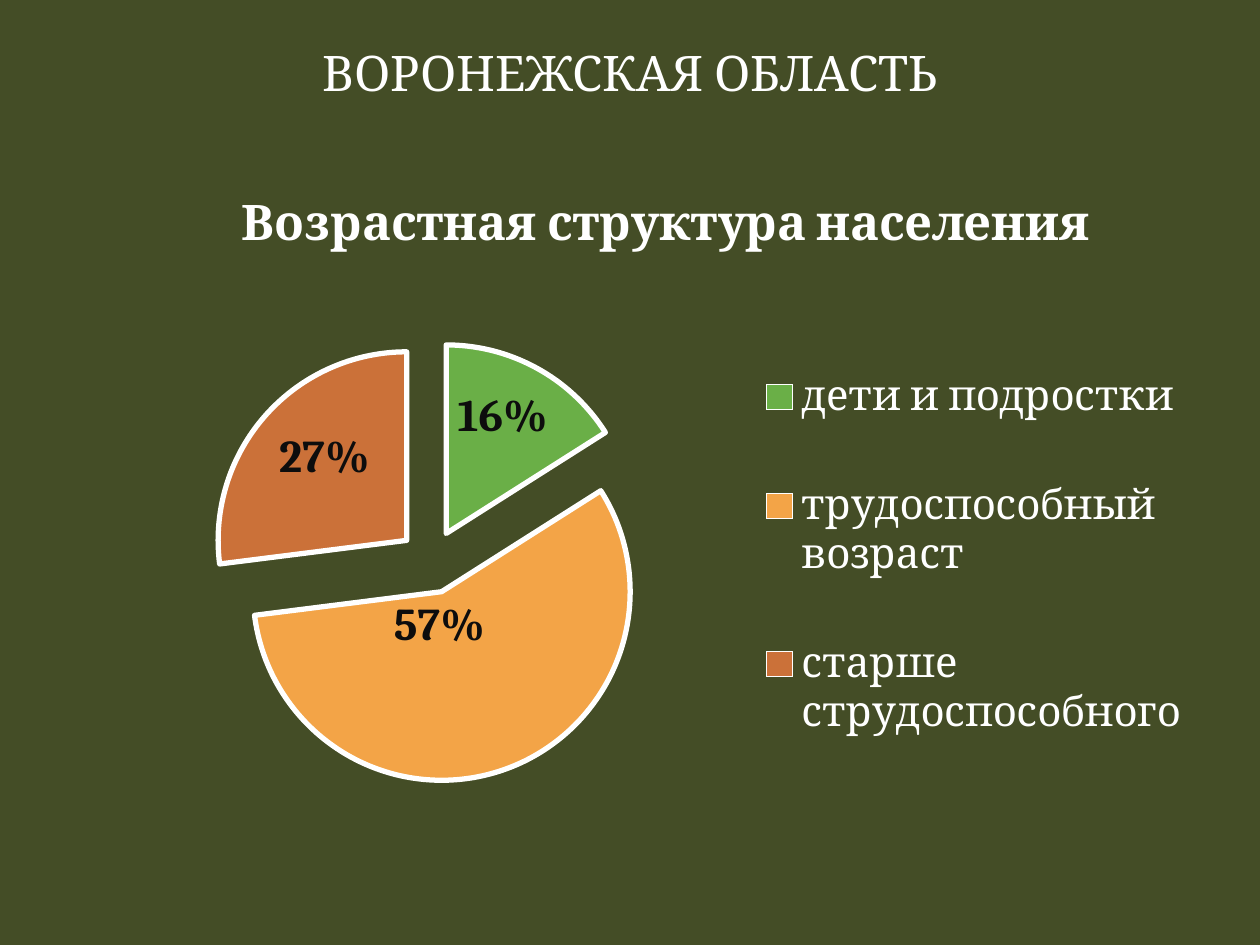
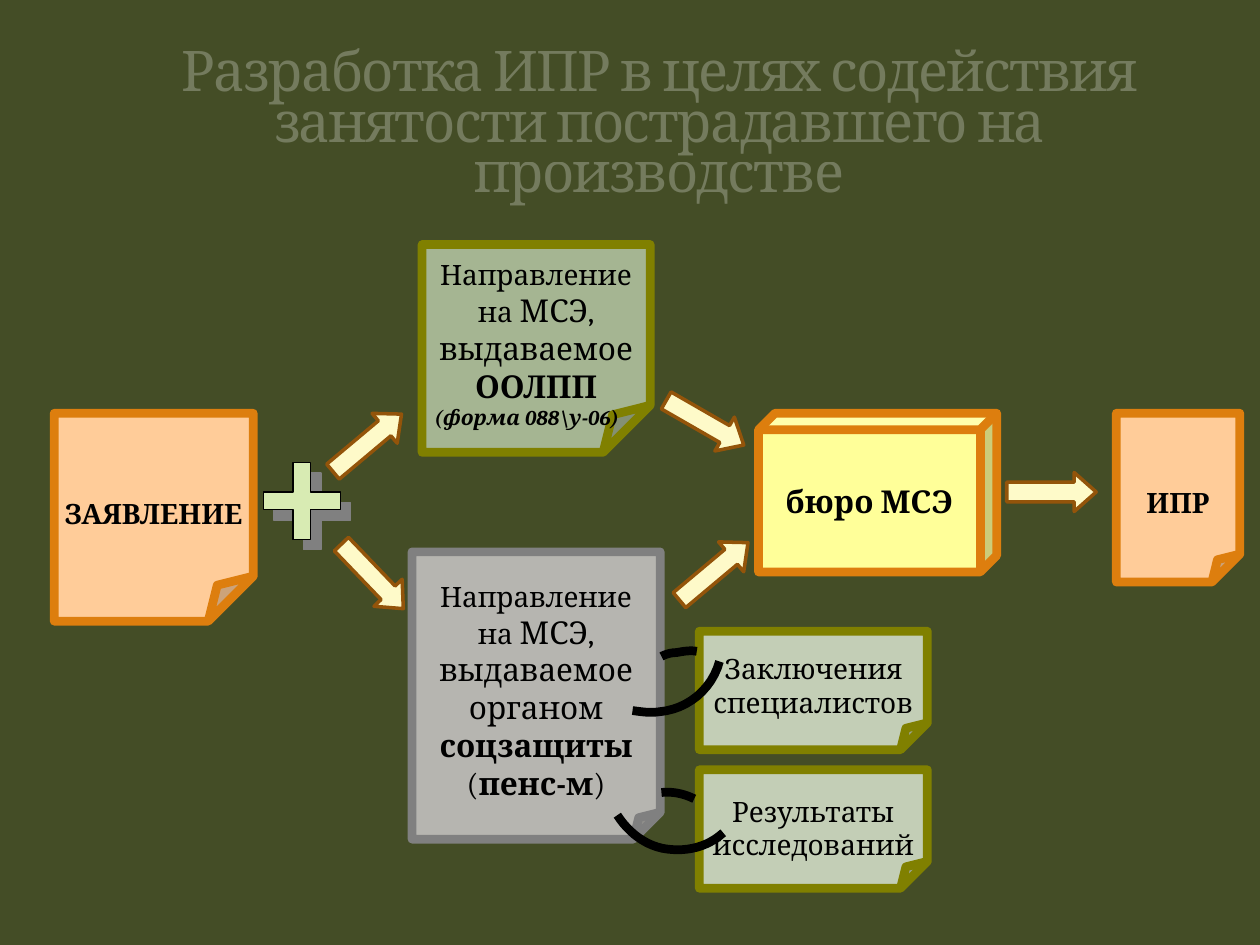
from pptx import Presentation
from pptx.chart.data import CategoryChartData
from pptx.dml.color import RGBColor
from pptx.enum.chart import XL_CHART_TYPE, XL_LABEL_POSITION, XL_LEGEND_POSITION
from pptx.enum.shapes import MSO_SHAPE
from pptx.enum.text import MSO_ANCHOR, MSO_AUTO_SIZE, PP_ALIGN
from pptx.oxml import parse_xml
from pptx.oxml.ns import nsdecls
from pptx.util import Inches, Pt

FONT = "Cambria"
BACKGROUND, WHITE, BLACK = "444D26", "FFFFFF", "000000"
ORANGE, PEACH, OLIVE, SAGE, GRAY = "DD7E0E", "FFCC99", "808000", "C3CEB6", "808080"
ARROW_FILL, ARROW_LINE = "FEFAC9", "93540A"


def rgb(value):
    return RGBColor.from_string(value)


def set_font(font, size, color, bold=False, italic=False):
    font.name, font.size, font.bold, font.italic = FONT, Pt(size), bold, italic
    font.color.rgb = rgb(color)


def run(text, size=18, color=BLACK, **style):
    return text, dict(size=size, color=color, **style)


def add_runs(p, runs, align=PP_ALIGN.CENTER):
    p.alignment = align
    for text, style in runs:
        r = p.add_run()
        r.text = text
        set_font(r.font, **style)


def manual_layout(x, y, w=None, h=None, inner=False, edge=True):
    target = '<c:layoutTarget val="inner"/>' if inner else ""
    modes = '<c:xMode val="edge"/><c:yMode val="edge"/>' if edge else ""
    sides = "".join(f'<c:{name} val="{value}"/>' for name, value in zip("xywh", (x, y, w, h))
                    if value is not None)
    return parse_xml(f'<c:layout {nsdecls("c")}><c:manualLayout>{target}{modes}{sides}'
                     '</c:manualLayout></c:layout>')


def place(element, layout, after=None):
    for old in element.findall(layout.tag):
        element.remove(old)
    if after is None:
        element.insert(0, layout)
    else:
        after.addnext(layout)


def bezier(start, *curves):
    points = [start]
    for a, b, end in curves:
        origin = points[-1]
        for i in range(1, 13):
            t = i / 12
            weights = ((1 - t) ** 3, 3 * t * (1 - t) ** 2, 3 * t * t * (1 - t), t ** 3)
            points.append(tuple(sum(w * q[k] for w, q in zip(weights, (origin, a, b, end)))
                                for k in (0, 1)))
    return points


class Deck:
    def __init__(self):
        self.prs = Presentation()
        self.prs.slide_width, self.prs.slide_height = Inches(10), Inches(7.5)

    def slide(self):
        self.s = self.prs.slides.add_slide(self.prs.slide_layouts[6])
        fill = self.s.background.fill
        fill.solid()
        fill.fore_color.rgb = rgb(BACKGROUND)

    def title(self, text, box, size, faded=False):
        tf = self.s.shapes.add_textbox(*map(Inches, box)).text_frame
        tf.word_wrap = True
        p = tf.paragraphs[0]
        add_runs(p, [run(text, size, WHITE)])
        if not faded:
            tf.auto_size = MSO_AUTO_SIZE.SHAPE_TO_FIT_TEXT
            return
        p.line_spacing = 0.75
        rPr = p.runs[0].font._element
        rPr.set("spc", "-100")
        alpha = f'<a:alpha {nsdecls("a")} val="25000"/>'
        rPr.find(".//{*}srgbClr").append(parse_xml(alpha))
        rPr.insert(0, parse_xml(
            f'<a:ln {nsdecls("a")} w="3175"><a:solidFill><a:srgbClr val="3C4422">'
            f'{alpha}</a:srgbClr></a:solidFill></a:ln>'))

    def paint(self, sp, fill, line, width):
        sp.shadow.inherit = False
        if fill:
            sp.fill.solid()
            sp.fill.fore_color.rgb = rgb(fill)
        else:
            sp.fill.background()
        sp.line.color.rgb = rgb(line)
        sp.line.width = Pt(width)

    def shape(self, kind, box, adj, fill, line, width=5, lines=(), top=0.05, left_last=False):
        sp = self.s.shapes.add_shape(kind, *map(Inches, box))
        guides = sp._element.spPr.find("{*}prstGeom/{*}avLst")
        guides.clear()
        for name, value in adj.items():
            guides.append(parse_xml(
                f'<a:gd {nsdecls("a")} name="{name}" fmla="val {round(value * 100000)}"/>'))
        self.paint(sp, fill, line, width)
        tf = sp.text_frame
        tf.word_wrap = False
        tf.vertical_anchor = MSO_ANCHOR.MIDDLE
        tf.margin_top = Inches(top)
        for i, runs in enumerate(lines):
            p = tf.add_paragraph() if i else tf.paragraphs[0]
            last = left_last and i == len(lines) - 1
            add_runs(p, runs, PP_ALIGN.LEFT if last else PP_ALIGN.CENTER)
        return sp

    def note(self, box, fill, line, lines, top=0.35, fold=0.226, **options):
        self.shape(MSO_SHAPE.FOLDED_CORNER, box, {"adj": fold}, fill, line,
                   lines=lines, top=top, **options)

    def arrow(self, x, y, angle):
        sp = self.shape(MSO_SHAPE.RIGHT_ARROW, (x, y, 0.71, 0.31),
                        {"adj1": 0.5, "adj2": 0.564}, ARROW_FILL, ARROW_LINE, 2)
        sp.rotation = angle

    def outline(self, points, line=BLACK, width=5, fill=None, close=False):
        points = [(Inches(x), Inches(y)) for x, y in points]
        fb = self.s.shapes.build_freeform(*points[0])
        fb.add_line_segments(points[1:], close=close)
        sp = fb.convert_to_shape()
        self.paint(sp, fill, line, width)
        return sp

    def plus(self, x, y, size, arm):
        a, b = (size - arm) / 2, (size + arm) / 2
        corners = [(a, 0), (a, a), (0, a), (0, b), (a, b), (a, size),
                   (b, size), (b, b), (size, b), (size, a), (b, a), (b, 0)]
        sp = self.outline([(x + dx, y + dy) for dx, dy in corners], width=0.75,
                          fill="D8EBB3", close=True)
        sp._element.spPr.find("{*}effectLst").append(parse_xml(
            f'<a:outerShdw {nsdecls("a")} blurRad="0" dist="107950" dir="2700000" '
            f'algn="ctr" rotWithShape="0"><a:srgbClr val="{GRAY}"/></a:outerShdw>'))

    def pie(self, box, title, slices):
        data = CategoryChartData(number_format="0%")
        data.categories = [name for name, *_ in slices]
        data.add_series(title, [value for _, value, *_ in slices])
        chart = self.s.shapes.add_chart(XL_CHART_TYPE.PIE, *map(Inches, box), data).chart
        set_font(chart.font, 18, WHITE)
        chart.has_title = True
        add_runs(chart.chart_title.text_frame.paragraphs[0], [run(title, 28, WHITE, bold=True)])
        title_xml = chart.chart_title._element
        place(title_xml, manual_layout(0.14, 0.01), title_xml.find("{*}tx"))
        chart.has_legend = True
        legend = chart.legend
        legend.position = XL_LEGEND_POSITION.RIGHT
        legend.include_in_layout = False
        set_font(legend.font, 24, WHITE)
        place(legend._element, manual_layout(0.6, 0.2, 0.39, 0.71),
              legend._element.find("{*}legendPos"))
        plot = chart.plots[0]
        plot.vary_by_categories = True
        place(plot._element.getparent(), manual_layout(0.12, 0.24, 0.39, 0.65, inner=True))
        series = plot.series[0]
        series.format.line.color.rgb = rgb(WHITE)
        series.format.line.width = Pt(3)
        series._element.spPr.addnext(parse_xml(f'<c:explosion {nsdecls("c")} val="17"/>'))
        labels = series.data_labels
        labels.show_value = True
        labels.number_format, labels.number_format_is_linked = "0%", False
        set_font(labels.font, 26, "0D0D0D", bold=True)
        for i, (_, _, color, shift) in enumerate(slices):
            point = series.points[i]
            point.format.fill.solid()
            point.format.fill.fore_color.rgb = rgb(color)
            point.format.line.color.rgb = rgb(WHITE)
            point.format.line.width = Pt(3)
            label = point.data_label
            set_font(label.font, 26, "0D0D0D", bold=True)
            label.position = XL_LABEL_POSITION.CENTER
            dLbl = labels._element.findall("{*}dLbl")[i]
            place(dLbl, manual_layout(*shift, edge=False), dLbl.find("{*}idx"))


def population_slide(deck):
    deck.slide()
    deck.title("ВОРОНЕЖСКАЯ ОБЛАСТЬ", (1.77, 0.29, 6.46, 0.57), 28)
    deck.pie((0.59, 1.39, 8.98, 5.43), "Возрастная структура населения", [
        ("дети и подростки", 0.16, "6AAF47", (0.01, -0.05)),
        ("трудоспособный возраст", 0.57, "F3A447", (-0.03, -0.08)),
        ("старше струдоспособного", 0.27, "CB7139", (-0.01, -0.03))])


def rehabilitation_slide(deck):
    deck.slide()
    deck.title("Разработка ИПР в целях содействия занятости пострадавшего на производстве",
               (0.98, 0.36, 8.5, 1), 32, faded=True)
    referral = [[run("Направление", 16)], [run("на", 16), run(" МСЭ,")], [run("выдаваемое")]]
    deck.note((3.35, 1.94, 1.81, 1.65), "A5B592", OLIVE, referral + [
        [run("ООЛПП", bold=True)],
        [run("(форма 088\\у-06)", 12, bold=True, italic=True)]], left_last=True)
    deck.note((3.27, 4.38, 1.97, 2.28), "B6B5B0", GRAY, referral + [
        [run("органом")], [run("соцзащиты", bold=True)],
        [run("("), run("пенс-м", bold=True), run(")")]], top=0.18, fold=0.108)
    for box, text in (((0.43, 3.28, 1.58, 1.65), "ЗАЯВЛЕНИЕ"), ((8.86, 3.28, 0.98, 1.34), "ИПР")):
        deck.note(box, PEACH, ORANGE, [[run(text, 16, bold=True)]])
    deck.plus(2.09, 3.67, 0.61, 0.14)
    for x, y, angle in ((2.56, 3.36, 320), (2.6, 4.42, 46.2), (5.31, 4.38, 320),
                        (5.24, 3.2, 29.9), (7.99, 3.75, 0)):
        deck.arrow(x, y, angle)
    deck.shape(MSO_SHAPE.CUBE, (6.02, 3.28, 1.89, 1.26), {"adj": 0.104}, "FFFF99", ORANGE,
               lines=[[run("бюро МСЭ", bold=True)]])
    for y, words, top in ((5.01, ("Заключения", "специалистов"), 0.18),
                          (6.11, ("Результаты", "исследований"), 0.24)):
        deck.note((5.55, y, 1.81, 0.94), SAGE, OLIVE, [[run(word, 16)] for word in words], top)
    for start, *curves in (
            ((5.02, 5.64), ((5.09, 5.65), (5.16, 5.66), (5.23, 5.65)),
             ((5.46, 5.63), (5.65, 5.47), (5.71, 5.25))),
            ((4.9, 6.47), ((4.99, 6.61), (5.13, 6.72), (5.3, 6.74)),
             ((5.46, 6.76), (5.62, 6.72), (5.74, 6.61))),
            ((5.53, 5.17), ((5.48, 5.16), (5.42, 5.17), (5.37, 5.18)),
             ((5.33, 5.18), (5.29, 5.19), (5.25, 5.21))),
            ((5.51, 6.34), ((5.43, 6.3), (5.34, 6.28), (5.25, 6.29)))):
        deck.outline(bezier(start, *curves))


def main():
    deck = Deck()
    population_slide(deck)
    rehabilitation_slide(deck)
    deck.prs.save("out.pptx")


if __name__ == "__main__":
    main()
